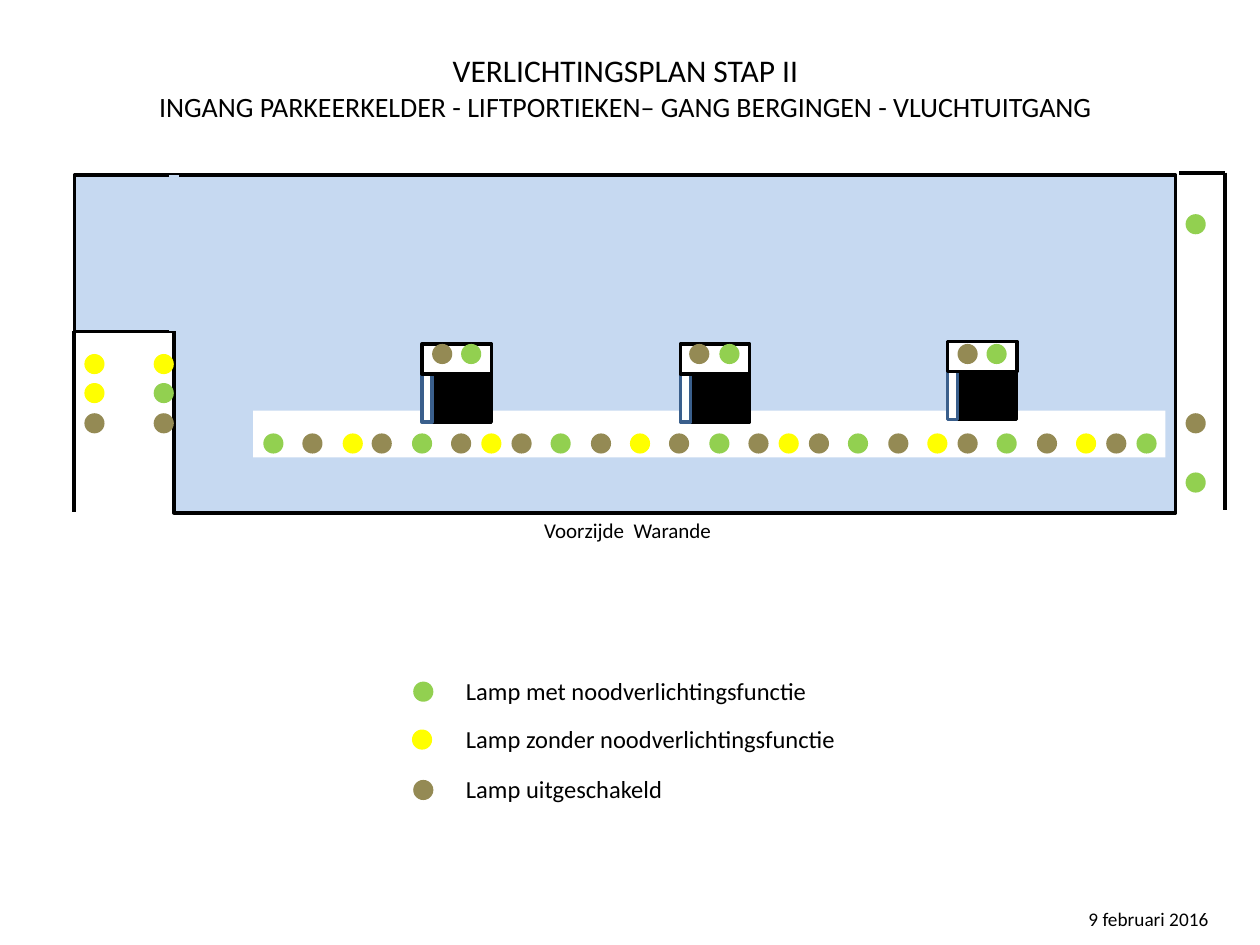
from dataclasses import dataclass
from itertools import cycle

from lxml import etree
from pptx import Presentation
from pptx import util as u
from pptx.dml import color
from pptx.enum import shapes, text
from pptx.oxml import ns


@dataclass(frozen=True)
class Theme:
    font: str = "Calibri"
    black: str = "000000"
    white: str = "FFFFFF"
    floor: str = "C6D9F1"
    door: str = "3A5F8C"
    emergency: str = "92D050"
    regular: str = "FFFF00"
    off: str = "948A54"
    title: float = 18
    subtitle: float = 16
    legend: float = 14
    caption: float = 12
    date: float = 11
    outline: float = 2
    wall: float = 2.25
    opening: float = 6
    lamp: float = 0.16


@dataclass(frozen=True)
class Box:
    left: float
    top: float
    width: float
    height: float

    def lengths(self) -> list:
        return [u.Inches(n) for n in (self.left, self.top, self.width, self.height)]


@dataclass(frozen=True)
class Lamp:
    left: float
    top: float
    fill: str


@dataclass(frozen=True)
class LegendEntry:
    lamp: Lamp
    label_top: float
    label: str


@dataclass(frozen=True)
class Wall:
    start: tuple
    end: tuple
    line: str
    width: float


THEME = Theme()

LIFTS = [(3.35, 2.73), (5.4, 2.73), (7.52, 2.71)]

WALLS = [
    Wall((9.36, 1.37), (9.72, 1.37), THEME.black, THEME.wall),
    Wall((9.72, 1.37), (9.72, 4.05), THEME.black, THEME.wall),
    Wall((0.59, 2.63), (0.59, 4.06), THEME.black, THEME.wall),
    Wall((1.38, 1.39), (1.38, 2.63), THEME.floor, THEME.opening),
]

LEGEND = [
    LegendEntry(Lamp(3.28, 5.41, THEME.emergency), 5.32, "Lamp met noodverlichtingsfunctie"),
    LegendEntry(Lamp(3.27, 5.79, THEME.regular), 5.7, "Lamp zonder noodverlichtingsfunctie"),
    LegendEntry(Lamp(3.28, 6.19, THEME.off), 6.09, "Lamp uitgeschakeld"),
]

CORRIDOR_TOP = 3.44
CORRIDOR_LEFTS = [
    2.09, 2.4, 2.72, 2.95, 3.27, 3.58, 3.82, 4.06, 4.37, 4.69, 5, 5.31, 5.63,
    5.94, 6.18, 6.42, 6.73, 7.05, 7.36, 7.6, 7.91, 8.23, 8.54, 8.78, 9.02,
]
CORRIDOR_ORDER = [THEME.emergency, THEME.off, THEME.regular, THEME.off]

PORTAL_TOP = 2.73
PORTAL_LEFTS = [(3.43, 3.66), (5.47, 5.71), (7.6, 7.83)]

ENTRANCE_LAMPS = [
    Lamp(0.67, 2.81, THEME.regular),
    Lamp(0.67, 3.04, THEME.regular),
    Lamp(0.67, 3.28, THEME.off),
    Lamp(1.22, 2.81, THEME.regular),
    Lamp(1.22, 3.04, THEME.emergency),
    Lamp(1.22, 3.28, THEME.off),
]
EXIT_LAMPS = [
    Lamp(9.41, 1.7, THEME.emergency),
    Lamp(9.41, 3.28, THEME.off),
    Lamp(9.41, 3.75, THEME.emergency),
]


def rgb(value: str) -> color.RGBColor:
    return color.RGBColor.from_string(value)


def add_shape(target, kind, box: Box, fill: str, line: str | None = None):
    shape = target.add_shape(kind, *box.lengths())
    shape.shadow.inherit = False
    shape.fill.solid()
    shape.fill.fore_color.rgb = rgb(fill)
    if line:
        shape.line.color.rgb = rgb(line)
        shape.line.width = u.Pt(THEME.outline)
    else:
        shape.line.fill.background()
    return shape


def add_room(target, box: Box, fill: str, line: str | None = None):
    return add_shape(target, shapes.MSO_SHAPE.RECTANGLE, box, fill, line)


def add_lamp(target, lamp: Lamp):
    box = Box(lamp.left, lamp.top, THEME.lamp, THEME.lamp)
    return add_shape(target, shapes.MSO_SHAPE.OVAL, box, lamp.fill)


def add_wall(target, wall: Wall) -> None:
    points = [u.Inches(n) for n in (*wall.start, *wall.end)]
    connector = target.add_connector(shapes.MSO_CONNECTOR.STRAIGHT, *points)
    connector.line.color.rgb = rgb(wall.line)
    connector.line.width = u.Pt(wall.width)
    etree.SubElement(connector._element.spPr, ns.qn("a:effectLst"))


def add_text(target, box: Box, *lines: str, sizes: tuple,
             align=text.PP_ALIGN.LEFT) -> None:
    frame = target.add_textbox(*box.lengths()).text_frame
    frame.word_wrap = True
    frame.auto_size = text.MSO_AUTO_SIZE.SHAPE_TO_FIT_TEXT
    frame.text = "\n".join(lines)
    for paragraph, size in zip(frame.paragraphs, sizes):
        paragraph.alignment = align
        font = paragraph.runs[0].font
        font.name = THEME.font
        font.size = u.Pt(size)
        font.color.rgb = rgb(THEME.black)


def add_lift(target, left: float, top: float) -> None:
    add_room(target, Box(left + 0.08, top + 0.23, 0.47, 0.39), THEME.black, THEME.black)
    add_room(target, Box(left, top + 0.23, 0.08, 0.39), THEME.white, THEME.door)
    add_room(target, Box(left, top, 0.55, 0.24), THEME.white, THEME.black)


def add_floor_plan(target) -> None:
    add_room(target, Box(1.38, 1.39, 7.95, 2.68), THEME.floor, THEME.black)
    add_room(target, Box(2.01, 3.26, 7.24, 0.37), THEME.white)
    add_room(target, Box(0.59, 1.39, 0.79, 1.24), THEME.floor, THEME.black)
    for wall in WALLS:
        add_wall(target, wall)


def add_legend(target) -> None:
    for entry in LEGEND:
        add_lamp(target, entry.lamp)
        add_text(target, Box(3.6, entry.label_top, 3.36, 0.34), entry.label,
                 sizes=(THEME.legend,))


def plan_lamps() -> list[Lamp]:
    corridor = [Lamp(left, CORRIDOR_TOP, fill)
                for left, fill in zip(CORRIDOR_LEFTS, cycle(CORRIDOR_ORDER))]
    portals = [Lamp(left, PORTAL_TOP, fill)
               for pair in PORTAL_LEFTS
               for left, fill in zip(pair, (THEME.off, THEME.emergency))]
    return corridor + portals + ENTRANCE_LAMPS + EXIT_LAMPS


def main() -> None:
    presentation = Presentation()
    presentation.slide_width = u.Inches(10)
    presentation.slide_height = u.Inches(7.5)
    slide = presentation.slides.add_slide(presentation.slide_layouts[6])
    canvas = slide.shapes

    add_floor_plan(canvas.add_group_shape().shapes)
    add_text(canvas, Box(0.75, 0.36, 8.43, 0.67), "VERLICHTINGSPLAN STAP II",
             "INGANG PARKEERKELDER - LIFTPORTIEKEN– GANG BERGINGEN - VLUCHTUITGANG",
             sizes=(THEME.title, THEME.subtitle), align=text.PP_ALIGN.CENTER)
    add_legend(canvas.add_group_shape().shapes)
    add_text(canvas, Box(4.22, 4.06, 2.28, 0.3), "Voorzijde  Warande", sizes=(THEME.caption,))
    for left, top in LIFTS:
        add_lift(canvas.add_group_shape().shapes, left, top)
    for lamp in plan_lamps():
        add_lamp(canvas, lamp)
    add_text(canvas, Box(8.54, 7.15, 1.4, 0.29), "9 februari 2016", sizes=(THEME.date,))
    presentation.save("out.pptx")


if __name__ == "__main__":
    main()
